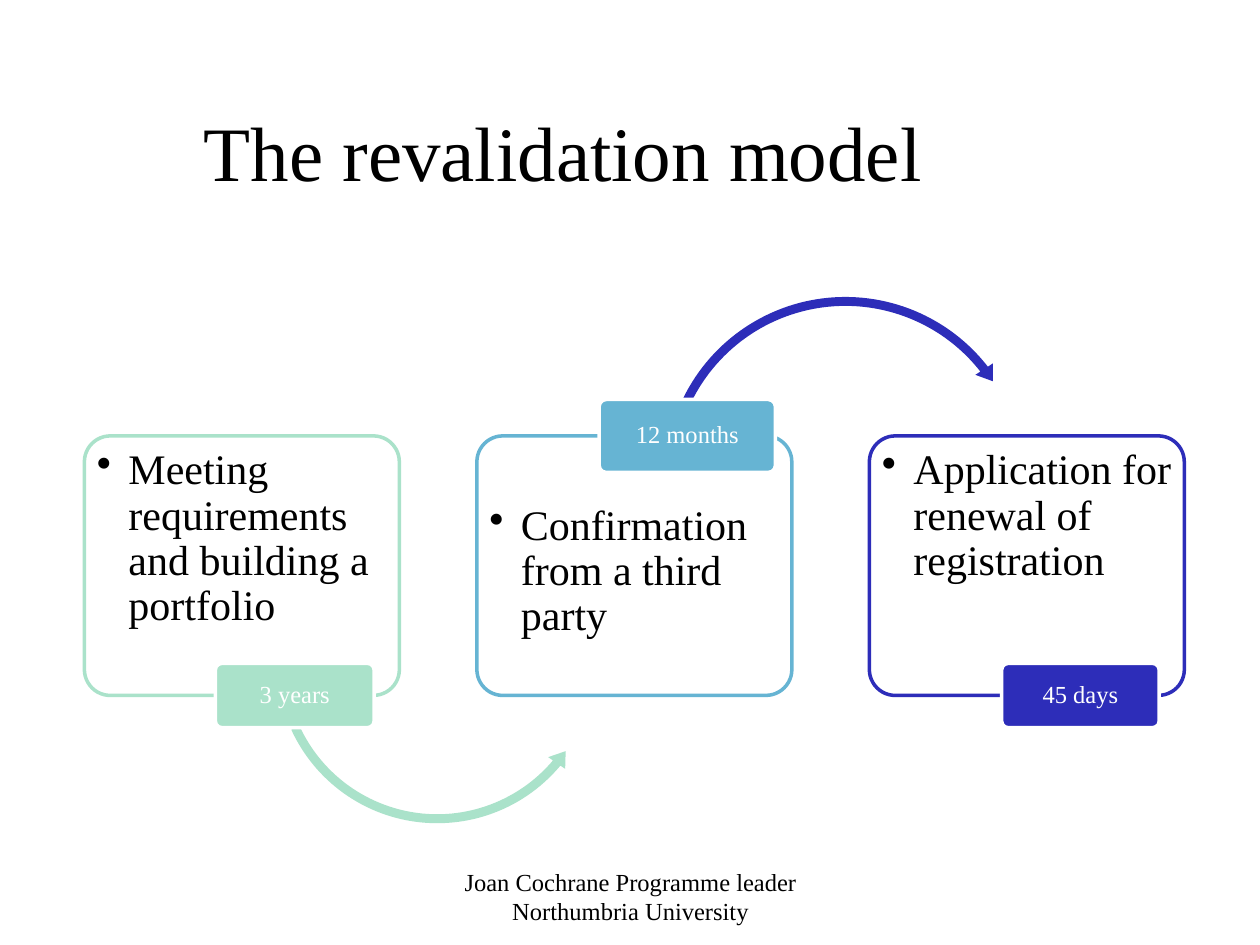
from dataclasses import dataclass

from lxml import etree
from pptx import Presentation, util as u
from pptx.dml.color import RGBColor
from pptx.enum import shapes, text
from pptx.oxml import ns

BLACK = RGBColor(0x00, 0x00, 0x00)
WHITE = RGBColor(0xFF, 0xFF, 0xFF)
MINT = RGBColor(0xAA, 0xE2, 0xCA)
SKY = RGBColor(0x66, 0xB4, 0xD3)
INDIGO = RGBColor(0x2D, 0x2D, 0xB9)

FONT = "Times New Roman"
PANEL_LEFT, PANEL_TOP = 0.67, 3.46
PANEL_WIDTH, PANEL_HEIGHT = 2.5, 2.06
COLUMN_STEP = 3.115
PADDING = 0.05
BODY_HEIGHT = 1.52


@dataclass
class Step:
    body: str
    period: str
    color: RGBColor
    label_offset: float
    label_size: tuple
    label_on_top: bool = False


STEPS = [
    Step("Meeting requirements and building a portfolio", "3 years", MINT, 1.04, (1.26, 0.51)),
    Step("Confirmation from a third party", "12 months", SKY, 0.97, (1.4, 0.58), True),
    Step("Application for renewal of registration", "45 days", INDIGO, 1.05, (1.25, 0.51)),
]

ARROWS = [
    (shapes.MSO_SHAPE.LEFT_CIRCULAR_ARROW, (2.15, 3.94, 2.64, 2.64), MINT,
     (0.027, 3.28, 24.0, 93.21, 0.031)),
    (shapes.MSO_SHAPE.CIRCULAR_ARROW, (5.23, 2.31, 2.96, 2.96), INDIGO,
     (0.024, 2.91, 193.21, 123.63, 0.028)),
]


def inches(box):
    return [u.Inches(length) for length in box]


def write(shape, content, size, color=BLACK, align=text.PP_ALIGN.CENTER,
          anchor=text.MSO_ANCHOR.TOP, insets=(0.1, 0.05), spacing=None, bullet=False):
    frame = shape.text_frame
    frame.word_wrap = True
    frame.auto_size = text.MSO_AUTO_SIZE.NONE
    frame.vertical_anchor = anchor
    frame.margin_left = frame.margin_right = u.Inches(insets[0])
    frame.margin_top = frame.margin_bottom = u.Inches(insets[1])
    paragraph = frame.paragraphs[0]
    paragraph.text = content
    paragraph.alignment = align
    if spacing:
        paragraph.line_spacing = spacing
    if bullet:
        properties = paragraph._p.get_or_add_pPr()
        properties.set("marL", str(u.Inches(0.25)))
        properties.set("indent", str(-u.Inches(0.25)))
        etree.SubElement(properties, ns.qn("a:buChar")).set("char", "•")
    font = paragraph.runs[0].font
    font.name, font.size, font.color.rgb = FONT, u.Pt(size), color


def add_filled(slide, kind, box, fill, adjustments, line=None):
    shape = slide.shapes.add_shape(kind, *inches(box))
    shape.shadow.inherit = False
    for index, value in enumerate(adjustments):
        shape.adjustments[index] = value
    shape.fill.solid()
    shape.fill.fore_color.rgb = fill
    if line is None:
        shape.line.fill.background()
    else:
        shape.line.color.rgb = line
        shape.line.width = u.Pt(2)
    return shape


def add_text(slide, box, content, size, **options):
    write(slide.shapes.add_textbox(*inches(box)), content, size, **options)


def add_panel(slide, column, step):
    left = PANEL_LEFT + column * COLUMN_STEP
    bottom = PANEL_TOP + PANEL_HEIGHT
    add_filled(slide, shapes.MSO_SHAPE.ROUNDED_RECTANGLE,
               (left, PANEL_TOP, PANEL_WIDTH, PANEL_HEIGHT), WHITE, [0.1], step.color)
    top = bottom - PADDING - BODY_HEIGHT if step.label_on_top else PANEL_TOP + PADDING
    add_text(slide, (left + PADDING, top, PANEL_WIDTH - 2 * PADDING, BODY_HEIGHT),
             step.body, 24, align=text.PP_ALIGN.LEFT, insets=(0.05, 0.05),
             spacing=0.9, bullet=True)


def add_label(slide, column, step):
    width, height = step.label_size
    left = PANEL_LEFT + column * COLUMN_STEP + step.label_offset
    edge = PANEL_TOP if step.label_on_top else PANEL_TOP + PANEL_HEIGHT
    label = add_filled(slide, shapes.MSO_SHAPE.ROUNDED_RECTANGLE,
                       (left, edge - height / 2, width, height), step.color, [0.1], WHITE)
    write(label, step.period, 14, color=WHITE, anchor=text.MSO_ANCHOR.MIDDLE,
          insets=(0.04, 0.03), spacing=0.9)


def add_title(slide, content):
    title = slide.shapes.title
    title.left, title.top, title.width, title.height = inches((0.63, 0.84, 7.68, 0.71))
    write(title, content, 44, anchor=text.MSO_ANCHOR.MIDDLE)


def main():
    presentation = Presentation()
    presentation.slide_width, presentation.slide_height = inches((10, 7.5))
    slide = presentation.slides.add_slide(presentation.slide_layouts[5])
    add_title(slide, "The revalidation model")
    for column, step in enumerate(STEPS):
        add_panel(slide, column, step)
        if column < len(ARROWS):
            kind, box, color, adjustments = ARROWS[column]
            add_filled(slide, kind, box, color, adjustments)
        add_label(slide, column, step)
    add_text(slide, (3.42, 6.83, 3.17, 0.5),
             "Joan Cochrane Programme leader Northumbria University", 14)
    presentation.save("out.pptx")


if __name__ == "__main__":
    main()
